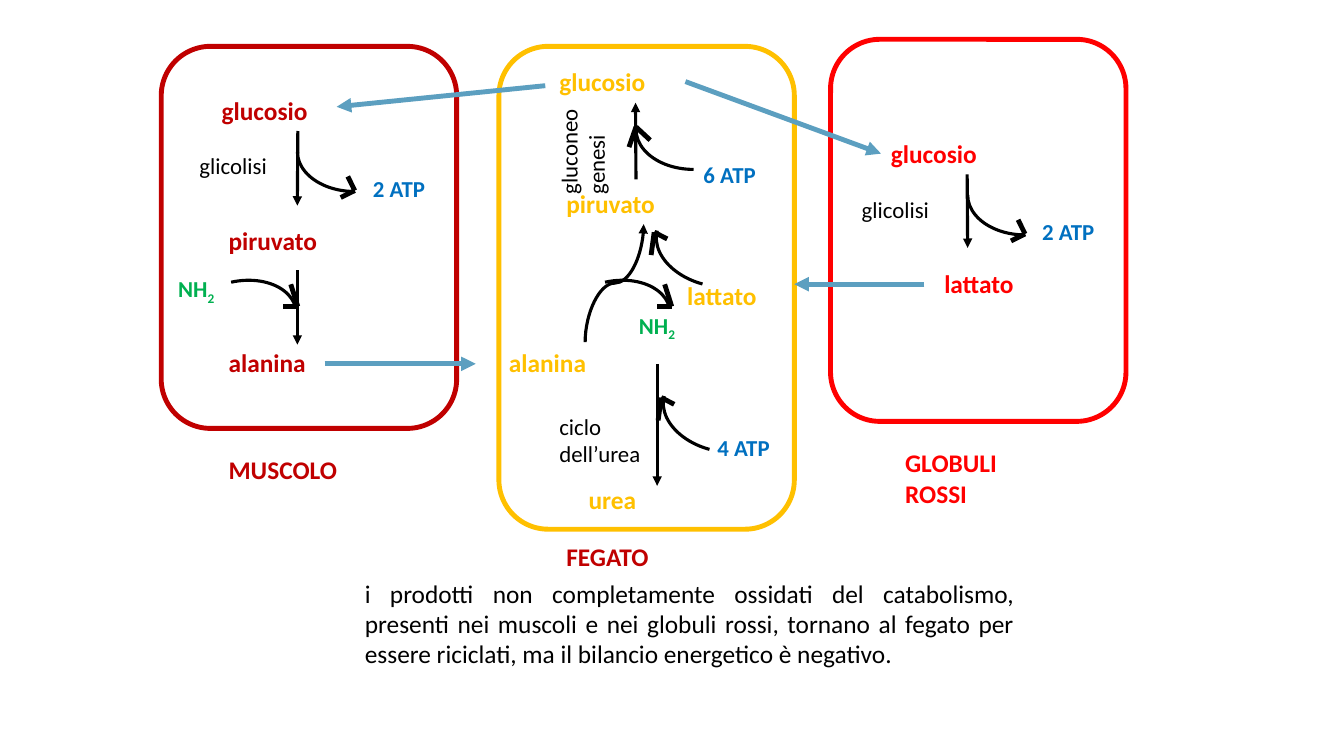
from dataclasses import dataclass
from typing import Any, Optional

from pptx import Presentation
from pptx.dml.color import RGBColor as RGB
from pptx.enum.shapes import MSO_AUTO_SHAPE_TYPE as Geo, MSO_CONNECTOR as Conn
from pptx.enum.text import MSO_ANCHOR as Anchor, MSO_AUTO_SIZE as Fit, PP_ALIGN as Align
from pptx.oxml.ns import qn
from pptx.oxml.xmlchemy import OxmlElement as Element
from pptx.util import Pt

Point = tuple[float, float]


@dataclass(frozen=True)
class Theme:
    font: str = "Calibri"
    muscle: str = "C00000"
    liver: str = "FFC000"
    blood: str = "FF0000"
    energy: str = "0070C0"
    amine: str = "00B050"
    ink: str = "000000"
    transport: str = "5C9FC0"
    large: float = 18.1
    small: float = 16.3
    thin: float = 2.25
    thick: float = 3.5


T = Theme()


@dataclass(frozen=True)
class Cell:
    x: float
    y: float
    h: float
    color: str
    w: float = 211


@dataclass(frozen=True)
class Label:
    text: str
    x: float
    y: float
    color: str
    w: float = 123.1
    h: float = 29.5
    size: float = T.large
    bold: bool = True
    sub: str = ""
    rot: float = 0
    key: str = ""


@dataclass(frozen=True)
class Bend:
    rot: float
    barbs: tuple[Point, Point, Point]


@dataclass(frozen=True)
class Hook:
    x: float
    y: float
    bend: Bend


@dataclass(frozen=True)
class Arrow:
    start: Point
    end: Point
    color: str = T.ink
    width: float = T.thin
    begin_at: Optional[tuple[str, int]] = None
    end_at: Optional[tuple[str, int]] = None


def side(text: str, x: float, y: float, color: str, sub: str = "") -> Label:
    return Label(text, x, y, color, 56.9, 27.4, T.small, sub=sub)


def process(text: str, x: float, y: float, w: float = 87.1, h: float = 27.4, rot: float = 0) -> Label:
    return Label(text, x, y, T.ink, w, h, T.small, False, rot=rot)


def transport(start: Point, end: Point, end_at: Optional[tuple[str, int]] = None) -> Arrow:
    return Arrow(start, end, T.transport, T.thick, end_at=end_at)


CELLS = [
    Cell(115.2, 33.1, 272.9, T.muscle),
    Cell(356.4, 33.1, 344.9, T.liver),
    Cell(593.3, 28.1, 272.9, T.blood),
]
LABELS = [
    Label("glucosio", 151.2, 64.1, T.muscle, key="muscle glucose"),
    Label("piruvato", 156.2, 157, T.muscle),
    Label("alanina", 156.2, 244.1, T.muscle),
    Label("MUSCOLO", 156.2, 321.1, T.muscle),
    Label("glucosio", 392.4, 43.9, T.liver, key="liver glucose"),
    Label("piruvato", 397.4, 131, T.liver),
    Label("lattato", 483.8, 196.6, T.liver),
    Label("alanina", 356.4, 244.1, T.liver),
    Label("urea", 413.3, 342, T.liver),
    Label("FEGATO", 397.4, 383, T.muscle),
    Label("glucosio", 629.3, 95, T.blood, key="blood glucose"),
    Label("lattato", 667.4, 187.9, T.blood),
    Label("GLOBULI ROSSI", 639.4, 316.1, T.blood, h=51.1),
    side("2 ATP", 259.2, 121, T.energy),
    side("2 ATP", 737.3, 151.9, T.energy),
    side("6 ATP", 495.4, 110.9, T.energy),
    side("4 ATP", 505.4, 306, T.energy),
    side("NH", 120.2, 193, T.amine, "2"),
    side("NH", 449.3, 218.9, T.amine, "2"),
    process("glicolisi", 135.4, 105.1),
    process("glicolisi", 608.4, 136.1),
    process("ciclo dell’urea", 392.4, 290.9, h=46.8),
    process("gluconeogenesi", 375.1, 81.4, 82.1, 46.8, 270),
]
RELEASE = Bend(180, ((36, 46.1), (41, 56.2), (31, 61.2)))
AMINO = Bend(347.4, ((77.4, 2.2), (82.4, 18), (72, 18)))
UPTAKE = Bend(194.9, ((-2.9, 35.3), (-0.7, 19), (8.6, 23.8)))
SYNTHESIS = Bend(180, ((-5, 41), (0, 26.6), (10.1, 36)))
HOOKS = [
    Hook(212.4, 79.9, RELEASE),
    Hook(691.2, 110.9, RELEASE),
    Hook(130.3, 200.9, AMINO),
    Hook(397.4, 200.9, AMINO),
    Hook(468, 146.9, UPTAKE),
    Hook(473, 265, UPTAKE),
    Hook(454.3, 64.1, SYNTHESIS),
]
ARROWS = [
    Arrow((212.4, 93.6), (212.4, 146.9), begin_at=("muscle glucose", 2)),
    Arrow((212.4, 193), (212.4, 246.2)),
    Arrow((691.2, 124.6), (691.2, 177.1), begin_at=("blood glucose", 2)),
    Arrow((454.3, 128.2), (454.3, 74.9), end_at=("liver glucose", 2)),
    Arrow((469.4, 259.9), (469.4, 347)),
    transport((231.8, 259.9), (339.8, 259.9)),
    transport((389.5, 61.2), (240.5, 76.3)),
    transport((489.6, 58.3), (628.6, 109.4), ("blood glucose", 1)),
    transport((660.2, 203), (567.4, 203)),
]
SUMMARY = ("i prodotti non completamente ossidati del catabolismo, presenti nei muscoli e nei globuli "
           "rossi, tornano al fegato per essere riciclati, ma il bilancio energetico è negativo.")


def apply(obj: Any, formats: dict[str, Any]) -> None:
    for name, value in formats.items():
        setattr(obj, name, value)


def add_run(p: Any, text: str, color: str, size: float, bold: bool) -> Any:
    r = p.add_run()
    r.text = text
    apply(r.font, {"name": T.font, "size": Pt(size), "bold": bold})
    r.font.color.rgb = RGB.from_string(color)
    return r


def outline(sp: Any, color: str, width: float) -> None:
    sp.line.color.rgb = RGB.from_string(color)
    sp.line.width = Pt(width)


def add_outlined(shapes: Any, geo: Any, x: float, y: float, w: float, h: float,
                 color: str, width: float) -> Any:
    sp = shapes.add_shape(geo, Pt(x), Pt(y), Pt(w), Pt(h))
    sp.shadow.inherit = False
    sp.fill.background()
    outline(sp, color, width)
    return sp


def add_label(shapes: Any, label: Label) -> Any:
    sp = shapes.add_textbox(Pt(label.x), Pt(label.y), Pt(label.w), Pt(label.h))
    sp.rotation = label.rot
    apply(sp.text_frame, {"word_wrap": True, "auto_size": Fit.SHAPE_TO_FIT_TEXT})
    p = sp.text_frame.paragraphs[0]
    add_run(p, label.text, label.color, label.size, label.bold)
    if label.sub:
        r = add_run(p, label.sub, label.color, label.size, label.bold)
        r.font._element.set("baseline", "-25000")
    return sp


def add_line(shapes: Any, start: Point, end: Point, color: str, width: float,
             head: bool = False, kind: Any = Conn.STRAIGHT) -> Any:
    c = shapes.add_connector(kind, *(Pt(v) for v in (*start, *end)))
    outline(c, color, width)
    if head:
        tail = Element("a:tailEnd")
        tail.set("type", "triangle")
        c.line._get_or_add_ln().append(tail)
    c._element.spPr.append(Element("a:effectLst"))
    return c


def add_hook(shapes: Any, hook: Hook) -> None:
    sp = add_outlined(shapes, Geo.ARC, hook.x, hook.y, 82.1, 56.9, T.ink, T.thin)
    sp.rotation = hook.bend.rot
    first, tip, last = ((hook.x + dx, hook.y + dy) for dx, dy in hook.bend.barbs)
    for start, end in ((first, tip), (tip, last)):
        add_line(shapes, start, end, T.ink, T.thick)


def add_arrow(shapes: Any, arrow: Arrow, named: dict[str, Any]) -> None:
    c = add_line(shapes, arrow.start, arrow.end, arrow.color, arrow.width, True)
    for joint, connect in ((arrow.begin_at, c.begin_connect), (arrow.end_at, c.end_connect)):
        if joint:
            connect(named[joint[0]], joint[1])


def add_summary(sp: Any) -> None:
    apply(sp, {"left": Pt(253.4), "top": Pt(409), "width": Pt(478.1), "height": Pt(73.4)})
    apply(sp.text_frame, {"word_wrap": True, "auto_size": Fit.NONE, "vertical_anchor": Anchor.TOP})
    p = sp.text_frame.paragraphs[0]
    apply(p, {"alignment": Align.JUSTIFY, "space_before": Pt(0)})
    pPr = p._p.get_or_add_pPr()
    for name in ("marL", "indent"):
        pPr.set(name, "0")
    pPr.append(Element("a:buNone"))
    add_run(p, SUMMARY, T.ink, T.large, False)


def main() -> None:
    prs = Presentation()
    apply(prs, {"slide_width": Pt(960), "slide_height": Pt(540)})
    s = prs.slides.add_slide(prs.slide_layouts[1])
    title = s.shapes.title._element
    title.getparent().remove(title)
    add_summary(s.placeholders[1])
    for cell in CELLS:
        add_outlined(s.shapes, Geo.ROUNDED_RECTANGLE, cell.x, cell.y, cell.w, cell.h, cell.color, T.thick)
    named = {label.key: add_label(s.shapes, label) for label in LABELS}
    for hook in HOOKS:
        add_hook(s.shapes, hook)
    for arrow in ARROWS:
        add_arrow(s.shapes, arrow, named)
    curve = add_line(s.shapes, (481, 223.2), (396.7, 181.4), T.ink, T.thin, True, Conn.CURVE)
    curve._element.spPr.find(qn("a:xfrm")).set("rot", "5400000")
    prs.save("out.pptx")


if __name__ == "__main__":
    main()
